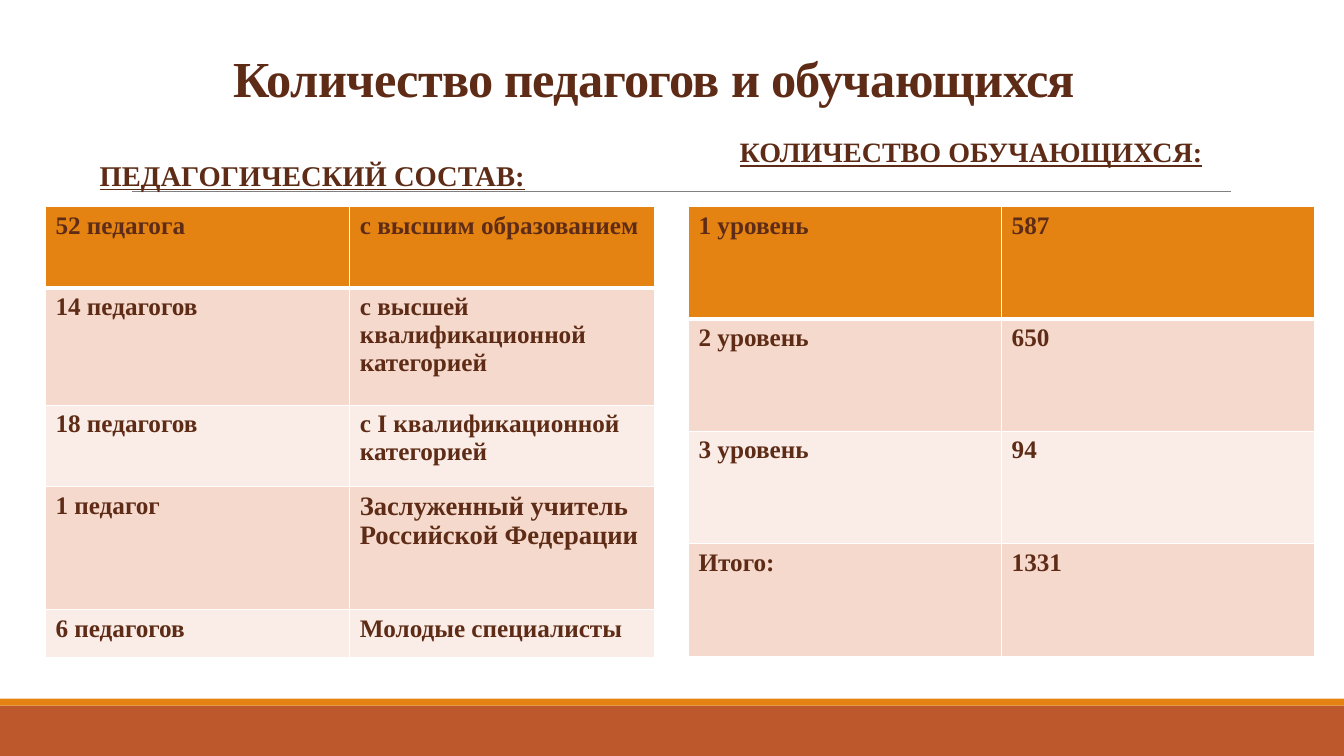
from lxml.etree import SubElement
from pptx import Presentation
from pptx.dml.color import RGBColor as RGB
from pptx.enum.shapes import MSO_CONNECTOR as CONN, MSO_SHAPE as SHAPE
from pptx.enum.text import MSO_ANCHOR as ANCHOR, PP_ALIGN as ALIGN
from pptx.oxml.ns import qn
from pptx.util import Inches, Pt

W, H = Inches(13.333), Inches(7.5)
FONT = "Times New Roman"
COLORS = {"text": "5E2C16", "head": "E48312", "odd": "F5D9CC", "even": "FAEDE7",
          "band": "BD582C", "rule": "808080", "border": "FFFFFF"}

STAFF = [("52 педагога", "с высшим образованием"),
         ("14 педагогов", "с высшей квалификационной категорией"),
         ("18 педагогов", "с I квалификационной категорией"),
         ("1 педагог", "Заслуженный учитель Российской Федерации"),
         ("6 педагогов", "Молодые специалисты")]
STUDENTS = [("1 уровень", "587"), ("2 уровень", "650"),
            ("3 уровень", "94"), ("Итого:", "1331")]


def col(n):
    """Width of n columns; the slide is 100 columns wide."""
    return round(W * n / 100)


def row(n):
    """Height of n rows; the slide is 100 rows high."""
    return round(H * n / 100)


def color(name):
    return RGB.from_string(COLORS[name])


def add_run(p, text, size, **extra):
    r = p.add_run()
    r.text = text
    r.font.color.rgb = color("text")
    fmt = {"name": FONT, "size": Pt(size), "bold": True, **extra}
    for key, value in fmt.items():
        setattr(r.font, key, value)
    return r


def add_bar(s, y, h, fill):
    sp = s.shapes.add_shape(SHAPE.RECTANGLE, 0, row(y), W, row(h))
    sp.shadow.inherit = False
    sp.fill.solid()
    sp.fill.fore_color.rgb = color(fill)
    sp.line.fill.background()


def add_rule(s, x1, x2, y):
    line = s.shapes.add_connector(CONN.STRAIGHT, col(x1), row(y), col(x2), row(y))
    line.line.color.rgb = color("rule")
    line.line.width = Pt(0.5)
    SubElement(line._element.spPr, qn("a:effectLst"))


def add_text(s, x, y, w, h, text, size, anchor=ANCHOR.MIDDLE,
             align=ALIGN.LEFT, spacing=0.9, **font):
    tf = s.shapes.add_textbox(col(x), row(y), col(w), row(h)).text_frame
    for key, value in {"word_wrap": True, "vertical_anchor": anchor}.items():
        setattr(tf, key, value)
    p = tf.paragraphs[0]
    p.alignment, p.line_spacing = align, spacing
    return add_run(p, text, size, **font)


def add_border(cell, side, width):
    ln = SubElement(cell._tc.get_or_add_tcPr(), qn("a:ln" + side), w=str(Pt(width)))
    fill = SubElement(ln, qn("a:solidFill"))
    SubElement(fill, qn("a:srgbClr"), val=COLORS["border"])


def add_grid(s, x, y, w, heights, rows, sizes):
    """Two equal columns, a header row and banded rows below it."""
    frame = s.shapes.add_table(len(rows), 2, col(x), row(y), col(w), row(sum(heights)))
    table = frame.table
    for column in table.columns:
        column.width = col(w / 2)
    for i, texts in enumerate(rows):
        table.rows[i].height = row(heights[i])
        fill = "head" if i == 0 else "odd" if i % 2 else "even"
        widths = {"L": 1, "R": 1, "T": 3 if i == 1 else 1, "B": 3 if i == 0 else 1}
        for j, text in enumerate(texts):
            cell = table.cell(i, j)
            for side, width in widths.items():
                add_border(cell, side, width)
            cell.fill.solid()
            cell.fill.fore_color.rgb = color(fill)
            add_run(cell.text_frame.paragraphs[0], text, sizes.get((i, j), 18))


def main():
    prs = Presentation()
    prs.slide_width, prs.slide_height = W, H
    s = prs.slides.add_slide(prs.slide_layouts[6])

    # Footer bands and rule
    add_bar(s, 93.33, 6.67, "band")
    add_bar(s, 92.4, 0.93, "head")
    add_rule(s, 9.83, 91.58, 25.33)

    # Title
    title = add_text(s, 7.43, 2.67, 82.5, 12.27, "Количество педагогов и обучающихся",
                     36, ANCHOR.BOTTOM, ALIGN.CENTER, 0.85)
    title._r.get_or_add_rPr().set("spc", "-50")

    # Teaching staff
    add_text(s, 6.68, 18, 39.75, 10.8, "ПЕДАГОГИЧЕСКИЙ СОСТАВ:", 20.4, underline=True)
    add_grid(s, 3.38, 27.33, 45.3, [10.8, 15.47, 10.8, 16.27, 6.27], STAFF, {(3, 1): 19})

    # Students
    add_text(s, 54.3, 14.93, 40.5, 10.8, "КОЛИЧЕСТВО ОБУЧАЮЩИХСЯ:", 20, underline=True)
    add_grid(s, 51.23, 27.33, 46.6, [14.87] * 4, STUDENTS, {})

    prs.save("out.pptx")


if __name__ == "__main__":
    main()
